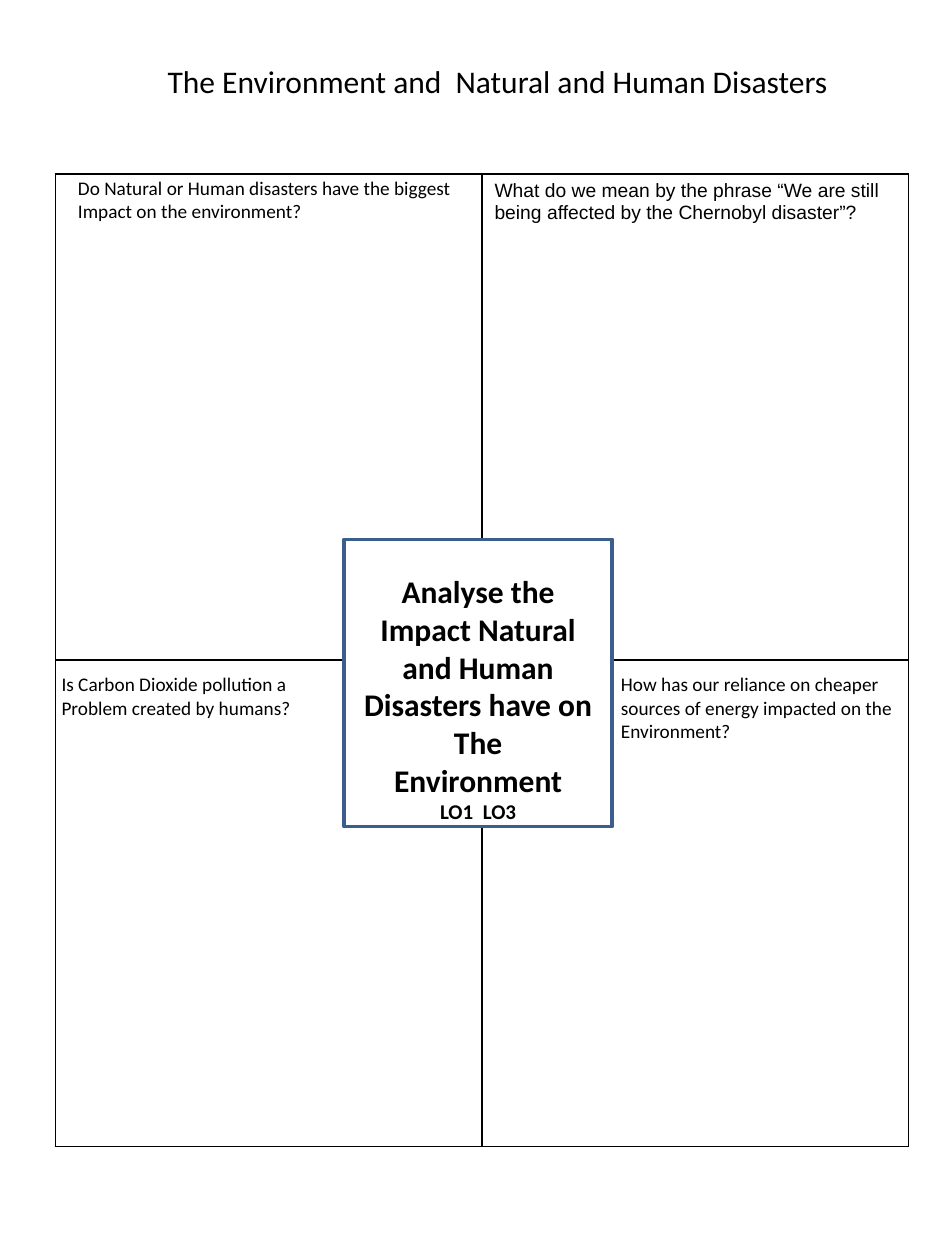
from lxml import etree
from pptx import Presentation
from pptx import util as u
from pptx.dml.color import RGBColor
from pptx.enum import shapes, text
from pptx.oxml.ns import qn


def color(value):
    return RGBColor.from_string(value)


def write(frame, lines, size, font="Calibri", bold=False, align=text.PP_ALIGN.LEFT):
    frame.text = "\n".join(lines)
    for paragraph in frame.paragraphs:
        paragraph.alignment = align
        for run in paragraph.runs:
            run.font.size = u.Pt(size)
            run.font.name = font
            run.font.bold = bold
            run.font.color.rgb = color("000000")


presentation = Presentation()
presentation.slide_width = u.Inches(7.5)
presentation.slide_height = u.Inches(10)
slide = presentation.slides.add_slide(presentation.slide_layouts[5])

title = slide.shapes.title
title.left, title.top = u.Inches(1.23), u.Inches(0.44)
title.width, title.height = u.Inches(5.74), u.Inches(0.4)
write(title.text_frame, ["The Environment and  Natural and Human Disasters"], 18)
title.text_frame.vertical_anchor = text.MSO_ANCHOR.TOP

table = slide.shapes.add_table(
    2, 2, u.Inches(0.44), u.Inches(1.38), u.Inches(6.77), u.Inches(7.72)
).table
table.first_row = False
table.horz_banding = False
for cell in table.iter_cells():
    properties = cell._tc.get_or_add_tcPr()
    for side in ("a:lnL", "a:lnR", "a:lnT", "a:lnB"):
        border = etree.SubElement(properties, qn(side), w=str(u.Pt(1)))
        fill = etree.SubElement(border, qn("a:solidFill"))
        etree.SubElement(fill, qn("a:srgbClr"), val="000000")
    cell.fill.background()
write(
    table.cell(0, 1).text_frame,
    ["What do we mean by the phrase “We are still being affected by the Chernobyl disaster”?"],
    11,
    font="Arial",
)

topic = slide.shapes.add_shape(
    shapes.MSO_SHAPE.RECTANGLE, u.Inches(2.73), u.Inches(4.28), u.Inches(2.13), u.Inches(2.28)
)
topic.shadow.inherit = False
topic.fill.solid()
topic.fill.fore_color.rgb = color("FFFFFF")
topic.line.color.rgb = color("3A5F8C")
topic.line.width = u.Pt(2)
topic_lines = [
    "Analyse the",
    "Impact Natural",
    "and Human",
    "Disasters have on",
    "The",
    "Environment",
    "LO1  LO3",
]
write(topic.text_frame, topic_lines, 18, bold=True, align=text.PP_ALIGN.CENTER)
topic.text_frame.paragraphs[-1].runs[0].font.size = u.Pt(12)
topic.text_frame.vertical_anchor = text.MSO_ANCHOR.BOTTOM
topic.text_frame.margin_bottom = u.Inches(0.02)

questions = [
    (0.52, 1.35, 3.19, ["Do Natural or Human disasters have the biggest", "Impact on the environment?"]),
    (0.39, 5.29, 2.2, ["Is Carbon Dioxide pollution a", "Problem created by humans?"]),
    (4.83, 5.29, 2.4, ["How has our reliance on cheaper", "sources of energy impacted on the", "Environment?"]),
]
for left, top, width, lines in questions:
    question = slide.shapes.add_textbox(
        u.Inches(left), u.Inches(top), u.Inches(width), u.Inches(0.1 + 0.185 * len(lines))
    )
    write(question.text_frame, lines, 11)
    question.text_frame.word_wrap = False

presentation.save("out.pptx")
